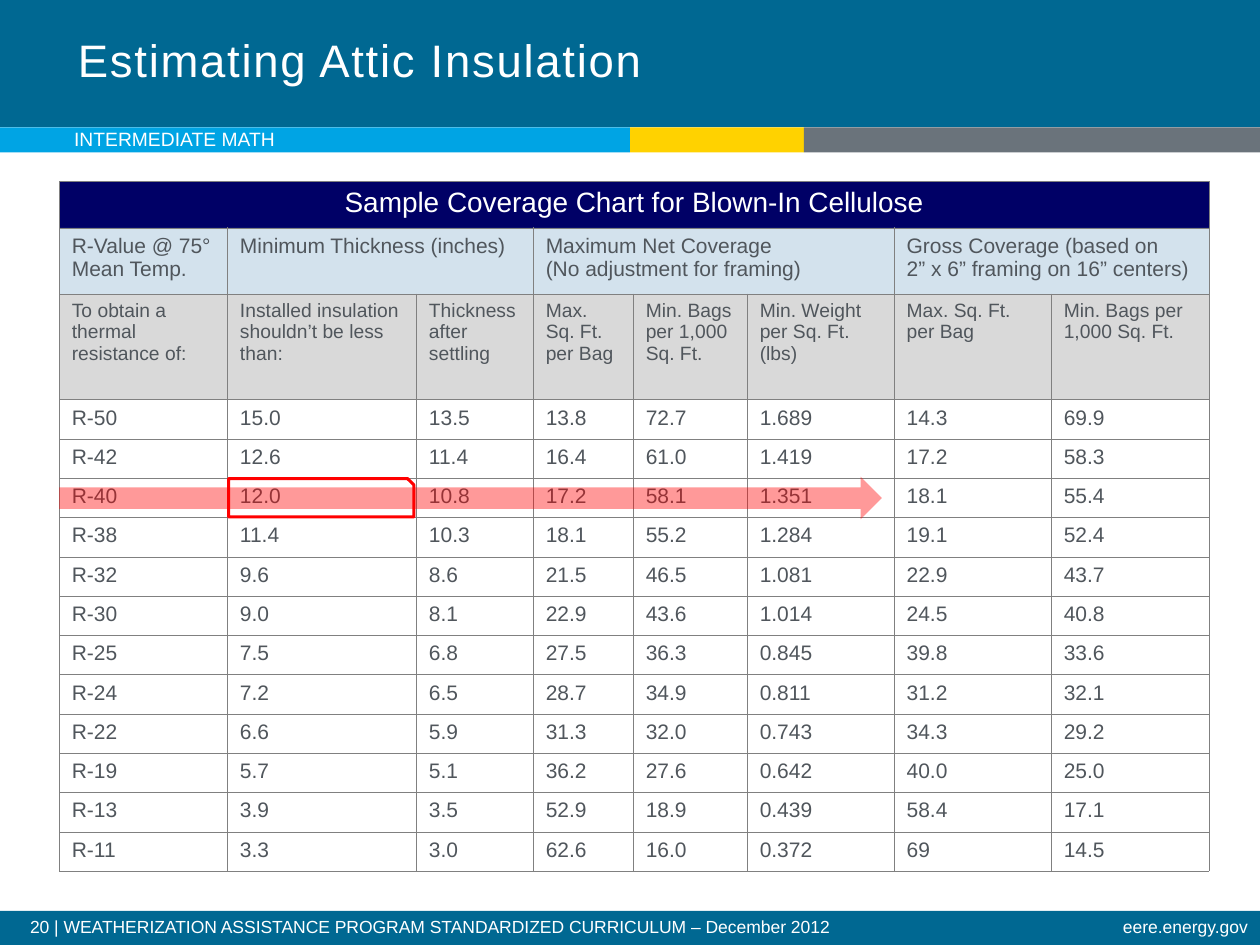
import dataclasses

import pptx
import pptx.dml.color
import pptx.enum.shapes
import pptx.enum.text
import pptx.oxml
import pptx.oxml.ns
import pptx.util

ALIGN = pptx.enum.text.PP_ALIGN
SHAPE = pptx.enum.shapes.MSO_SHAPE
qn = pptx.oxml.ns.qn


@dataclasses.dataclass(frozen=True)
class Theme:
    font: str = "Arial"
    band: str = "006892"
    sky: str = "00A4E4"
    yellow: str = "FFD200"
    slate: str = "6A737B"
    navy: str = "000066"
    blue: str = "528FBA"
    gray: str = "D9D9D9"
    border: str = "808080"
    ink: str = "50565C"
    white: str = "FFFFFF"
    red: str = "FF0000"
    title_size: int = 26
    caption_size: int = 16
    body_size: int = 12
    small_size: int = 11
    footer_size: int = 10


THEME = Theme()
WIDTH, HEIGHT = pptx.util.Inches(10), pptx.util.Inches(7.5)

# Percent of the slide's width and height
TABLE_LEFT, TABLE_TOP = 4.7, 19.2
COLUMNS = [13.35, 15, 9.27, 7.94, 9.05, 11.66, 12.47, 12.54]
BODY_ROW = 4.16
HEADER_ROWS = [4.72, 7, 11.2]

CAPTION = "Sample Coverage Chart for Blown-In Cellulose"
# Text and number of columns spanned
GROUPS = [
    ("R-Value @ 75° Mean Temp.", 1),
    ("Minimum Thickness (inches)", 2),
    ("Maximum Net Coverage\v(No adjustment for framing)", 3),
    ("Gross Coverage (based on\v2” x 6” framing on 16” centers)", 2),
]
HEADINGS = [
    "To obtain a thermal resistance of:",
    "Installed insulation shouldn’t be less than:",
    "Thickness after settling",
    "Max. Sq. Ft. per Bag",
    "Min. Bags per 1,000 Sq. Ft.",
    "Min. Weight per Sq. Ft. (lbs)",
    "Max. Sq. Ft. per Bag",
    "Min. Bags per 1,000 Sq. Ft.",
]
COVERAGE = """
R-50 15.0 13.5 13.8 72.7 1.689 14.3 69.9
R-42 12.6 11.4 16.4 61.0 1.419 17.2 58.3
R-40 12.0 10.8 17.2 58.1 1.351 18.1 55.4
R-38 11.4 10.3 18.1 55.2 1.284 19.1 52.4
R-32 9.6 8.6 21.5 46.5 1.081 22.9 43.7
R-30 9.0 8.1 22.9 43.6 1.014 24.5 40.8
R-25 7.5 6.8 27.5 36.3 0.845 39.8 33.6
R-24 7.2 6.5 28.7 34.9 0.811 31.2 32.1
R-22 6.6 5.9 31.3 32.0 0.743 34.3 29.2
R-19 5.7 5.1 36.2 27.6 0.642 40.0 25.0
R-13 3.9 3.5 52.9 18.9 0.439 58.4 17.1
R-11 3.3 3.0 62.6 16.0 0.372 69 14.5
"""
ROWS = [line.split() for line in COVERAGE.split("\n") if line]
HIGHLIGHT = next(i for i, row in enumerate(ROWS) if row[0] == "R-40")


def across(percent):
    return round(WIDTH * percent / 100)


def down(percent):
    return round(HEIGHT * percent / 100)


def place(left, top, width, height):
    return across(left), down(top), across(width), down(height)


def rgb(color):
    return pptx.dml.color.RGBColor.from_string(color)


def paint(target, properties, color, opacity=100):
    """Fill a shape or cell; properties is the XML element holding its fill."""
    target.fill.solid()
    target.fill.fore_color.rgb = rgb(color)
    if opacity < 100:
        node = properties.find(qn("a:solidFill")).find(qn("a:srgbClr"))
        alpha = pptx.oxml.parse_xml(
            f'<a:alpha {pptx.oxml.ns.nsdecls("a")} val="{opacity * 1000}"/>')
        node.append(alpha)


def write(para, text, size, color, **formats):
    para.text = text
    for name, value in formats.items():
        setattr(para, name, value)
    for span in para.runs:
        values = {"name": THEME.font, "size": pptx.util.Pt(size)}
        for name, value in values.items():
            setattr(span.font, name, value)
        span.font.color.rgb = rgb(color)


def add_block(page, kind, frame, fill=None, opacity=100, line=None):
    block = page.shapes.add_shape(kind, *place(*frame))
    block.shadow.inherit = False
    if fill:
        paint(block, block._element.spPr, fill, opacity)
    else:
        block.fill.background()
    if line:
        block.line.color.rgb = rgb(line)
        block.line.width = pptx.util.Pt(1.75)
    else:
        block.line.fill.background()


def add_label(page, frame, text, size, wrap=True, anchor="TOP", **formats):
    box = page.shapes.add_textbox(*place(*frame))
    box.text_frame.word_wrap = wrap
    box.text_frame.vertical_anchor = getattr(pptx.enum.text.MSO_ANCHOR, anchor)
    para = box.text_frame.paragraphs[0]
    write(para, text, size, THEME.white, **formats)
    return para


def add_borders(cell):
    properties = cell._tc.get_or_add_tcPr()
    for index, side in enumerate(("lnL", "lnR", "lnT", "lnB")):
        properties.insert(index, pptx.oxml.parse_xml(
            f'<a:{side} {pptx.oxml.ns.nsdecls("a")} w="3175"><a:solidFill>'
            f'<a:srgbClr val="{THEME.border}"/></a:solidFill></a:{side}>'))


def fill_cell(cell, text, size, color=THEME.ink, **formats):
    write(cell.text_frame.paragraphs[0], text, size, color, **formats)


def add_coverage_table(page):
    heights = HEADER_ROWS + [BODY_ROW] * len(ROWS)
    frame = place(TABLE_LEFT, TABLE_TOP, sum(COLUMNS), sum(heights))
    table = page.shapes.add_table(len(heights), len(COLUMNS), *frame).table
    table.first_row = table.horz_banding = False
    for column, width in zip(table.columns, COLUMNS):
        column.width = across(width)
    for row, height in zip(table.rows, heights):
        row.height = down(height)

    header_fills = [(THEME.navy, 100), (THEME.blue, 25), (THEME.gray, 100)]
    for index, row in enumerate(table.rows):
        for cell in row.cells:
            if index < len(header_fills):
                paint(cell, cell._tc.get_or_add_tcPr(), *header_fills[index])
            else:
                cell.fill.background()
            add_borders(cell)

    table.cell(0, 0).merge(table.cell(0, len(COLUMNS) - 1))
    fill_cell(table.cell(0, 0), CAPTION, THEME.caption_size, THEME.white,
              alignment=ALIGN.CENTER)
    start = 0
    for text, columns in GROUPS:
        if columns > 1:
            table.cell(1, start).merge(table.cell(1, start + columns - 1))
        fill_cell(table.cell(1, start), text, THEME.body_size)
        start += columns
    for index, values in enumerate([HEADINGS] + ROWS, start=2):
        size = THEME.small_size if values is HEADINGS else THEME.body_size
        for column, text in enumerate(values):
            fill_cell(table.cell(index, column), text, size)


def add_bands(page):
    bands = [
        ((0, 0, 100, 13.47), THEME.band),
        ((0, 96.4, 100, 3.6), THEME.band),
        ((0, 13.47, 50, 2.67), THEME.sky),
        ((50, 13.47, 13.8, 2.67), THEME.yellow),
        ((63.8, 13.47, 36.2, 2.67), THEME.slate),
    ]
    for frame, color in bands:
        add_block(page, SHAPE.RECTANGLE, frame, color)


def add_highlight(page):
    """Mark the chosen row with an arrow and its thickness with an outline."""
    top = TABLE_TOP + sum(HEADER_ROWS) + HIGHLIGHT * BODY_ROW
    add_block(page, SHAPE.RIGHT_ARROW, (TABLE_LEFT, top, 65.3, 4.53),
              THEME.red, opacity=40)
    add_block(page, SHAPE.SNIP_1_RECTANGLE,
              (TABLE_LEFT + COLUMNS[0] + 0.1, top + 0.2, 14.7, 4.06),
              line=THEME.red)


def main():
    deck = pptx.Presentation()
    deck.slide_width, deck.slide_height = WIDTH, HEIGHT
    page = deck.slides.add_slide(deck.slide_layouts[6])
    add_bands(page)
    add_label(page, (1.4, 96.53, 79.7, 3.47),
              "20 | WEATHERIZATION ASSISTANCE PROGRAM STANDARDIZED CURRICULUM"
              " – December 2012", THEME.footer_size, line_spacing=0.9)
    add_label(page, (59.9, 96.53, 40.1, 3.47), "eere.energy.gov",
              THEME.footer_size, line_spacing=0.9, alignment=ALIGN.RIGHT)
    add_coverage_table(page)
    title = add_label(page, (5.2, 0, 58.7, 13.2), "Estimating Attic Insulation",
                      THEME.title_size, anchor="MIDDLE",
                      line_spacing=pptx.util.Pt(28))
    title.runs[0].font._element.set("spc", "100")
    add_highlight(page)
    add_label(page, (4.9, 12.8, 37.7, 4.53), "INTERMEDIATE MATH",
              THEME.small_size, wrap=False)
    deck.save("out.pptx")


if __name__ == "__main__":
    main()
